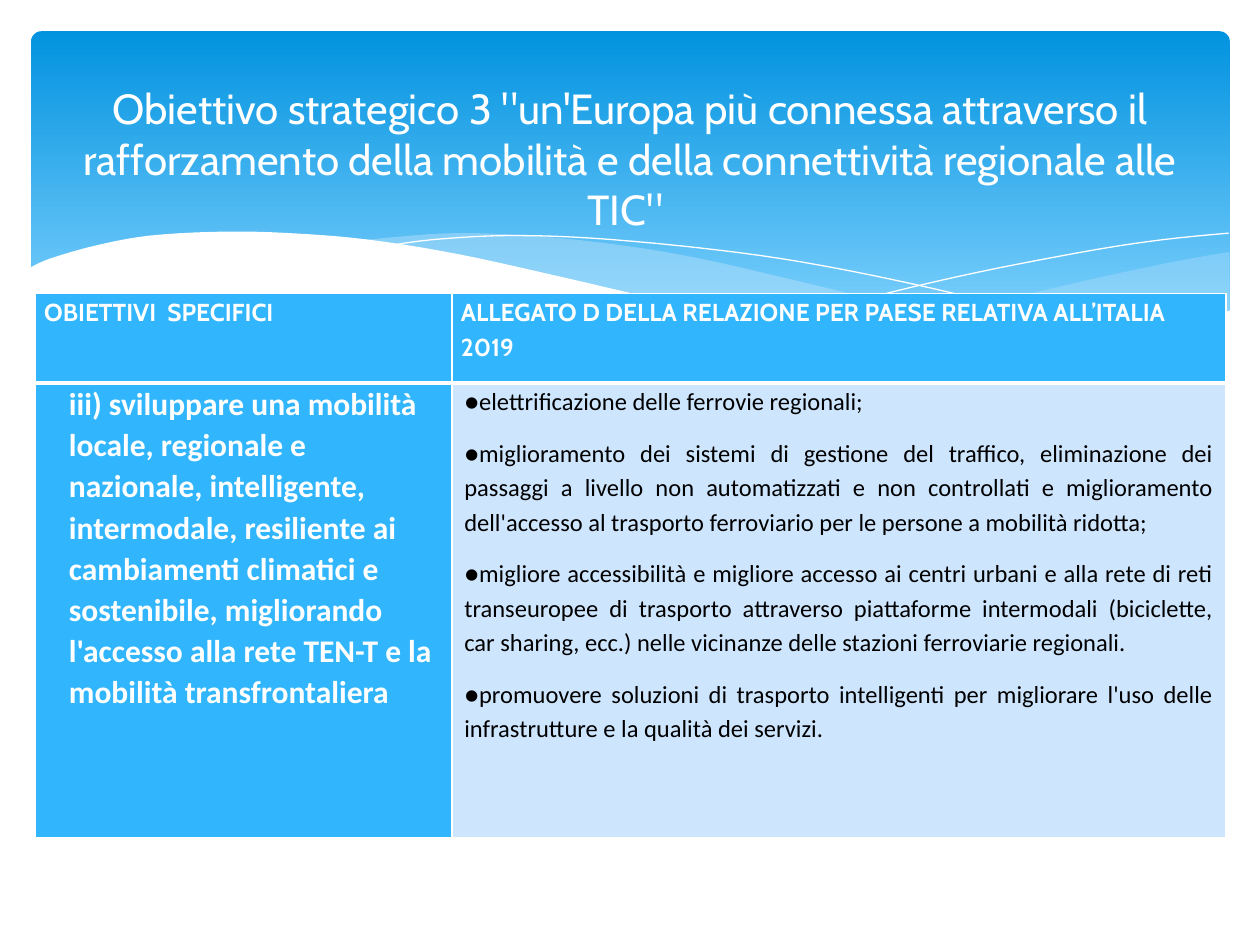
from lxml.etree import SubElement
from pptx import Presentation
from pptx.dml.color import RGBColor
from pptx.enum.shapes import MSO_SHAPE
from pptx.enum.text import MSO_ANCHOR, MSO_AUTO_SIZE, PP_ALIGN
from pptx.oxml import parse_xml
from pptx.oxml.ns import nsdecls, qn
from pptx.util import Cm, Pt

COLORS = {
    "white": "FFFFFF",
    "black": "000000",
    "sky_top": "0293E0",
    "sky_bottom": "83D3FE",
    "mist": "C6E7FC",
    "header": "31B6FD",
    "body": "CEE5FE",
}

RIGHT_WAVE = [
    [(24.79, 5.08), (23.75, 5.26), (21.87, 5.66), (19.79, 6.15), (17.93, 6.53), (16.79, 6.73)],
    [(16.79, 6.73), (18.26, 6.91), (19.53, 7.04), (20.68, 7.06), (21.92, 6.99), (23.19, 6.78),
     (24.1, 6.53), (24.79, 6.27)],
]
CENTRE_WAVE = [
    [(22.68, 6.93), (20.5, 6.6), (17.93, 6.1), (15.98, 5.64), (14.1, 5.21), (12.42, 4.93),
     (10.67, 4.75), (9.17, 4.7), (7.95, 4.78), (7.26, 4.85)],
    [(7.26, 4.85), (9.19, 5.16), (11.4, 5.64), (13.46, 6.1), (15.27, 6.48), (16.89, 6.76),
     (18.69, 6.99), (20.5, 7.06), (21.77, 7.04), (22.68, 6.93)],
]
FALLING_LINE = [
    [(7.85, 4.95), (8.74, 4.83), (10.19, 4.75), (11.91, 4.8), (14.12, 5), (16.15, 5.28),
     (18.47, 5.74), (21.11, 6.38), (23.04, 6.91)],
]
RISING_LINE = [
    [(15.57, 6.53), (17.65, 5.97), (19.71, 5.49), (22, 5.05), (23.47, 4.83), (24.77, 4.7)],
]
WHITE_HILL = [
    [(24.82, 6.25), (23.88, 6.58), (22.53, 6.88), (20.55, 7.04), (18.44, 6.91), (15.9, 6.55),
     (13.44, 6.07), (11.35, 5.59), (9.27, 5.13), (7.42, 4.83), (5.84, 4.7), (4.5, 4.67),
     (3.02, 4.75), (1.93, 4.95), (1.02, 5.21), (0.58, 5.41)],
    [(0.58, 8.36), (24.82, 8.36)],
]

TITLE = (
    "Obiettivo strategico 3 \"un'Europa più connessa attraverso il rafforzamento "
    "della mobilità e della connettività regionale alle TIC\" "
)
HEADERS = [
    "OBIETTIVI  SPECIFICI",
    "ALLEGATO D DELLA RELAZIONE PER PAESE RELATIVA ALL’ITALIA 2019",
]
OBJECTIVE = (
    "iii) sviluppare una mobilità locale, regionale e nazionale, intelligente, intermodale, "
    "resiliente ai cambiamenti climatici e sostenibile, migliorando l'accesso alla rete TEN-T "
    "e la mobilità transfrontaliera"
)
MEASURES = [
    "●elettrificazione delle ferrovie regionali;",
    "●miglioramento dei sistemi di gestione del traffico, eliminazione dei passaggi a livello "
    "non automatizzati e non controllati e miglioramento dell'accesso al trasporto ferroviario "
    "per le persone a mobilità ridotta;",
    "●migliore accessibilità e migliore accesso ai centri urbani e alla rete di reti "
    "transeuropee di trasporto attraverso piattaforme intermodali (biciclette, car sharing, "
    "ecc.) nelle vicinanze delle stazioni ferroviarie regionali.",
    "●promuovere soluzioni di trasporto intelligenti per migliorare l'uso delle infrastrutture "
    "e la qualità dei servizi.",
]


def rgb(name):
    return RGBColor.from_string(COLORS[name])


def smooth(knots, steps=5):
    padded = [knots[0], *knots, knots[-1]]
    curve = [knots[0]]
    for a, b, c, d in zip(padded, padded[1:], padded[2:], padded[3:]):
        for step in range(1, steps + 1):
            t = step / steps
            curve.append(tuple(
                0.5 * (2 * q + (r - p) * t + (2 * p - 5 * q + 4 * r - s) * t ** 2
                       + (3 * q - p - 3 * r + s) * t ** 3)
                for p, q, r, s in zip(a, b, c, d)
            ))
    return curve


def add_wave(slide, edges, fill=None, opacity=100):
    outline = [(Cm(x), Cm(y)) for edge in edges for x, y in smooth(edge)]
    builder = slide.shapes.build_freeform(*outline[0])
    builder.add_line_segments(outline[1:], close=fill is not None)
    wave = builder.convert_to_shape()
    wave.shadow.inherit = False
    if fill is None:
        wave.fill.background()
        wave.line.color.rgb = rgb("white")
        wave.line.width = Pt(0)
        return
    wave.fill.solid()
    wave.fill.fore_color.rgb = rgb(fill)
    wave.line.fill.background()
    if opacity < 100:
        tint = wave.element.spPr.find(qn("a:solidFill"))[0]
        SubElement(tint, qn("a:alpha")).set("val", str(opacity * 1000))


def add_sky(slide):
    sky = slide.shapes.add_shape(
        MSO_SHAPE.ROUNDED_RECTANGLE, Cm(0.63), Cm(0.63), Cm(24.16), Cm(6.86))
    sky.adjustments[0] = 0.03
    sky.shadow.inherit = False
    sky.line.fill.background()
    sky.fill.gradient()
    sky.fill.gradient_angle = 270
    stops = zip(sky.fill.gradient_stops, ("sky_top", "sky_bottom"), (0, 0.9))
    for stop, color, position in stops:
        stop.color.rgb = rgb(color)
        stop.position = position


def add_run(paragraph, text, size, font, color, bold=False):
    run = paragraph.add_run()
    run.text = text
    run.font.size = Pt(size)
    run.font.name = font
    run.font.bold = bold
    run.font.color.rgb = rgb(color)


def place_title(slide):
    title = slide.shapes.title
    title.left, title.top, title.width, title.height = Cm(1.27), Cm(0.94), Cm(22.86), Cm(3.48)
    frame = title.text_frame
    frame.auto_size = MSO_AUTO_SIZE.NONE
    frame.word_wrap = True
    frame.vertical_anchor = MSO_ANCHOR.MIDDLE
    frame.margin_top, frame.margin_bottom = Cm(1.02), Cm(0)
    heading = frame.paragraphs[0]
    heading.alignment = PP_ALIGN.CENTER
    add_run(heading, TITLE, 24, "Cabin", "white")
    title.element.getparent().append(title.element)


def set_borders(cell, **widths):
    properties = cell._tc.get_or_add_tcPr()
    for index, side in enumerate("LRTB"):
        width = Pt(widths.get(side, 1))
        properties.insert(index, parse_xml(
            f'<a:ln{side} {nsdecls("a")} w="{width}"><a:solidFill>'
            f'<a:srgbClr val="{COLORS["white"]}"/></a:solidFill></a:ln{side}>'))


def fill_cell(cell, texts, fill, margin, spacing, after=0, align=PP_ALIGN.LEFT,
              indent=0, **style):
    cell.fill.solid()
    cell.fill.fore_color.rgb = rgb(fill)
    cell.margin_left = cell.margin_right = Cm(margin)
    cell.margin_top = cell.margin_bottom = Cm(0)
    frame = cell.text_frame
    for number, text in enumerate(texts):
        paragraph = frame.add_paragraph() if number else frame.paragraphs[0]
        paragraph.alignment = align
        paragraph.line_spacing = spacing
        paragraph.space_after = Pt(after)
        if indent:
            paragraph._p.get_or_add_pPr().set("marL", str(Cm(indent)))
        add_run(paragraph, text, **style)


def add_objectives(slide):
    objectives = slide.shapes.add_table(2, 2, Cm(0.71), Cm(5.92), Cm(24), Cm(10.97)).table
    for column, width in zip(objectives.columns, (8.4, 15.6)):
        column.width = Cm(width)
    for row, height in zip(objectives.rows, (1.8, 9.17)):
        row.height = Cm(height)
    for column, header in enumerate(HEADERS):
        fill_cell(objectives.cell(0, column), [header], "header", 0.18, 1.15,
                  size=14, font="Cabin", color="white", bold=True)
        set_borders(objectives.cell(0, column), B=3)
    fill_cell(objectives.cell(1, 0), [OBJECTIVE], "header", 0.18, 1.07, after=8, indent=0.5,
              size=18, font="Calibri", color="white", bold=True)
    fill_cell(objectives.cell(1, 1), MEASURES, "body", 0.25, 1.15, after=10,
              align=PP_ALIGN.JUSTIFY, size=14, font="Calibri", color="black")
    for column in range(2):
        set_borders(objectives.cell(1, column), T=3)


def main():
    presentation = Presentation()
    presentation.slide_width, presentation.slide_height = Cm(25.4), Cm(19.05)
    slide = presentation.slides.add_slide(presentation.slide_layouts[5])
    add_sky(slide)
    add_wave(slide, RIGHT_WAVE, "mist", 29)
    add_wave(slide, CENTRE_WAVE, "mist", 40)
    add_wave(slide, FALLING_LINE)
    add_wave(slide, RISING_LINE)
    add_wave(slide, WHITE_HILL, "white")
    place_title(slide)
    add_objectives(slide)
    presentation.save("out.pptx")


if __name__ == "__main__":
    main()
